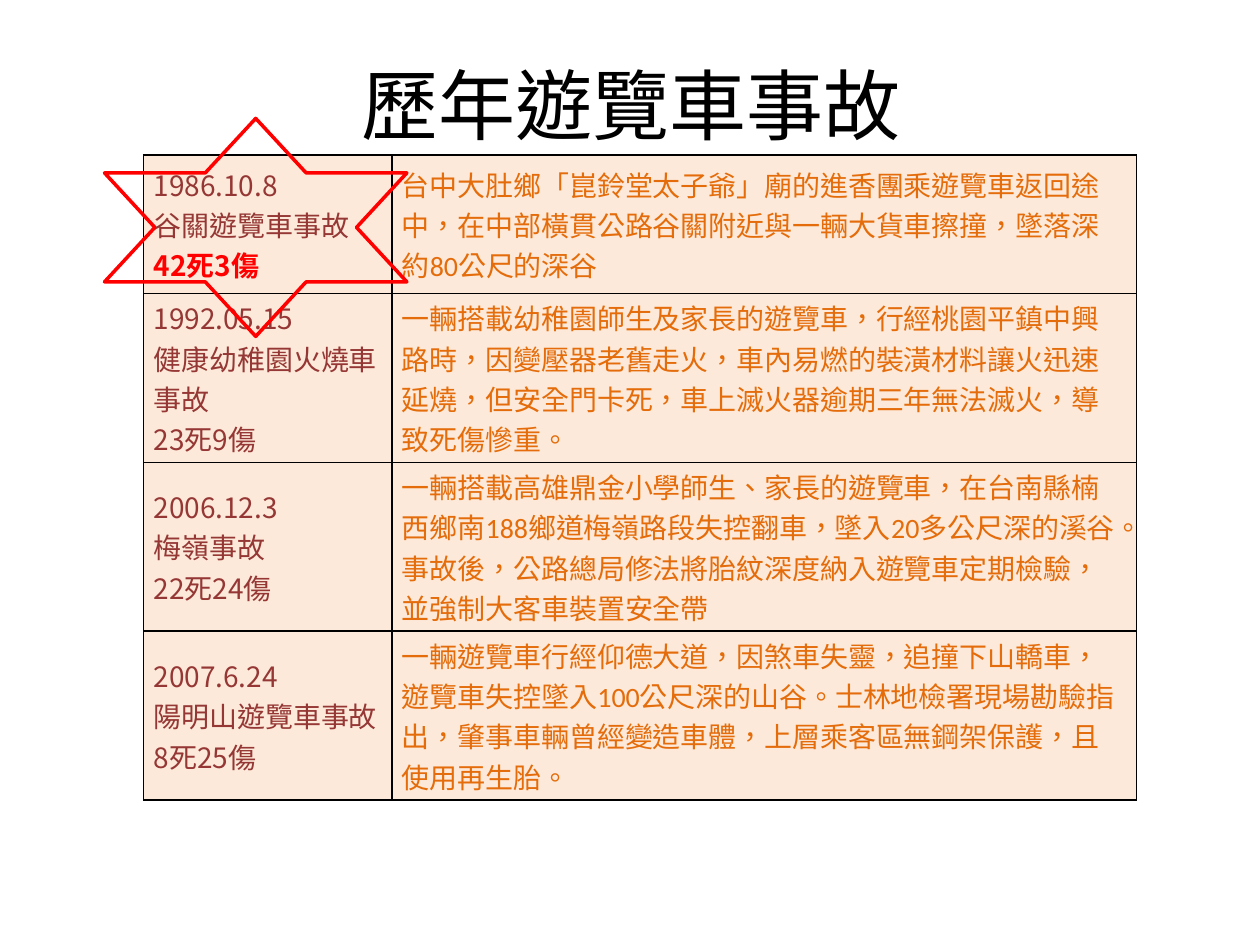
import pptx
import pptx.util
import pptx.dml.color
import pptx.enum.shapes
import pptx.enum.text
import pptx.oxml.ns
from lxml import etree

Inches = pptx.util.Inches
Pt = pptx.util.Pt
qn = pptx.oxml.ns.qn

CJK_FONT = "Noto Sans CJK SC"
COLUMN_WIDTHS = (1.97, 5.91)
ROW_HEIGHTS = (1.1, 1.34, 1.34, 1.34)
ACCIDENTS = [
    ("1986.10.8", "谷關遊覽車事故", "42死3傷",
     "台中大肚鄉「崑鈴堂太子爺」廟的進香團乘遊覽車返回途中，在中部橫貫公路谷關附近與一輛大貨車擦撞，墜落深約80公尺的深谷"),
    ("1992.05.15", "健康幼稚園火燒車事故", "23死9傷",
     "一輛搭載幼稚園師生及家長的遊覽車，行經桃園平鎮中興路時，因變壓器老舊走火，車內易燃的裝潢材料讓火迅速延燒，但安全門卡死，車上滅火器逾期三年無法滅火，導致死傷慘重。"),
    ("2006.12.3", "梅嶺事故", "22死24傷",
     "一輛搭載高雄鼎金小學師生、家長的遊覽車，在台南縣楠西鄉南188鄉道梅嶺路段失控翻車，墜入20多公尺深的溪谷。事故後，公路總局修法將胎紋深度納入遊覽車定期檢驗，並強制大客車裝置安全帶"),
    ("2007.6.24", "陽明山遊覽車事故", "8死25傷",
     "一輛遊覽車行經仰德大道，因煞車失靈，追撞下山轎車，遊覽車失控墜入100公尺深的山谷。士林地檢署現場勘驗指出，肇事車輛曾經變造車體，上層乘客區無鋼架保護，且使用再生胎。"),
]


def color(value):
    return pptx.dml.color.RGBColor.from_string(value)


def format_text(paragraph, size, font_color, font_name=CJK_FONT, bold=False):
    for run in paragraph.runs:
        run.font.size = Pt(size)
        run.font.bold = bold
        run.font.color.rgb = color(font_color)
        run.font.name = font_name
        run.font._element.set("lang", "zh-TW")
        east_asian = etree.SubElement(run.font._element, qn("a:ea"))
        east_asian.set("typeface", CJK_FONT)


def add_title(slide, left, top, width, height):
    title = slide.shapes.add_textbox(Inches(left), Inches(top), Inches(width), Inches(height))
    text_frame = title.text_frame
    text_frame.word_wrap = True
    text_frame.vertical_anchor = pptx.enum.text.MSO_ANCHOR.MIDDLE
    text_frame.text = "歷年遊覽車事故"
    paragraph = text_frame.paragraphs[0]
    paragraph.alignment = pptx.enum.text.PP_ALIGN.CENTER
    format_text(paragraph, 44, "000000")


def style_cell(cell):
    properties = cell._tc.get_or_add_tcPr()
    for side in ("lnL", "lnR", "lnT", "lnB"):
        border = etree.SubElement(properties, qn(f"a:{side}"), w=str(Pt(1)))
        fill = etree.SubElement(border, qn("a:solidFill"))
        etree.SubElement(fill, qn("a:srgbClr"), val="000000")
    cell.fill.solid()
    cell.fill.fore_color.rgb = color("FDE9D9")
    cell.vertical_anchor = pptx.enum.text.MSO_ANCHOR.MIDDLE
    cell.margin_left = cell.margin_right = Inches(0.08)
    cell.margin_top = cell.margin_bottom = 0


def add_accident_table(slide, left, top, width, height):
    table = slide.shapes.add_table(
        len(ACCIDENTS), len(COLUMN_WIDTHS),
        Inches(left), Inches(top), Inches(width), Inches(height)).table
    table.first_row = False
    table.horz_banding = False
    for column, column_width in zip(table.columns, COLUMN_WIDTHS):
        column.width = Inches(column_width)
    for row, row_height, accident in zip(table.rows, ROW_HEIGHTS, ACCIDENTS):
        row.height = Inches(row_height)
        summary, description = row.cells
        summary.text_frame.text = "\n".join(accident[:3])
        description.text_frame.text = accident[3]
        for cell in (summary, description):
            style_cell(cell)
        for paragraph in summary.text_frame.paragraphs:
            format_text(paragraph, 16, "953735")
        format_text(description.text_frame.paragraphs[0], 16, "E46C0A", "Calibri")
    casualties = table.cell(0, 0).text_frame.paragraphs[2].runs[0]
    casualties.font.bold = True
    casualties.font.color.rgb = color("FF0000")


def add_star(slide, left, top, width, height):
    star = slide.shapes.add_shape(
        pptx.enum.shapes.MSO_SHAPE.STAR_6_POINT,
        Inches(left), Inches(top), Inches(width), Inches(height))
    star.shadow.inherit = False
    star.fill.background()
    star.line.color.rgb = color("FF0000")
    star.line.width = Pt(2)


def main():
    presentation = pptx.Presentation()
    presentation.slide_width = Inches(10)
    presentation.slide_height = Inches(7.5)
    slide = presentation.slides.add_slide(presentation.slide_layouts[6])
    add_title(slide, 0.51, 0.2, 9, 1.25)
    add_accident_table(slide, 1.14, 1.23, sum(COLUMN_WIDTHS), sum(ROW_HEIGHTS))
    add_star(slide, 0.83, 0.94, 2.4, 1.73)
    presentation.save("out.pptx")


if __name__ == "__main__":
    main()
